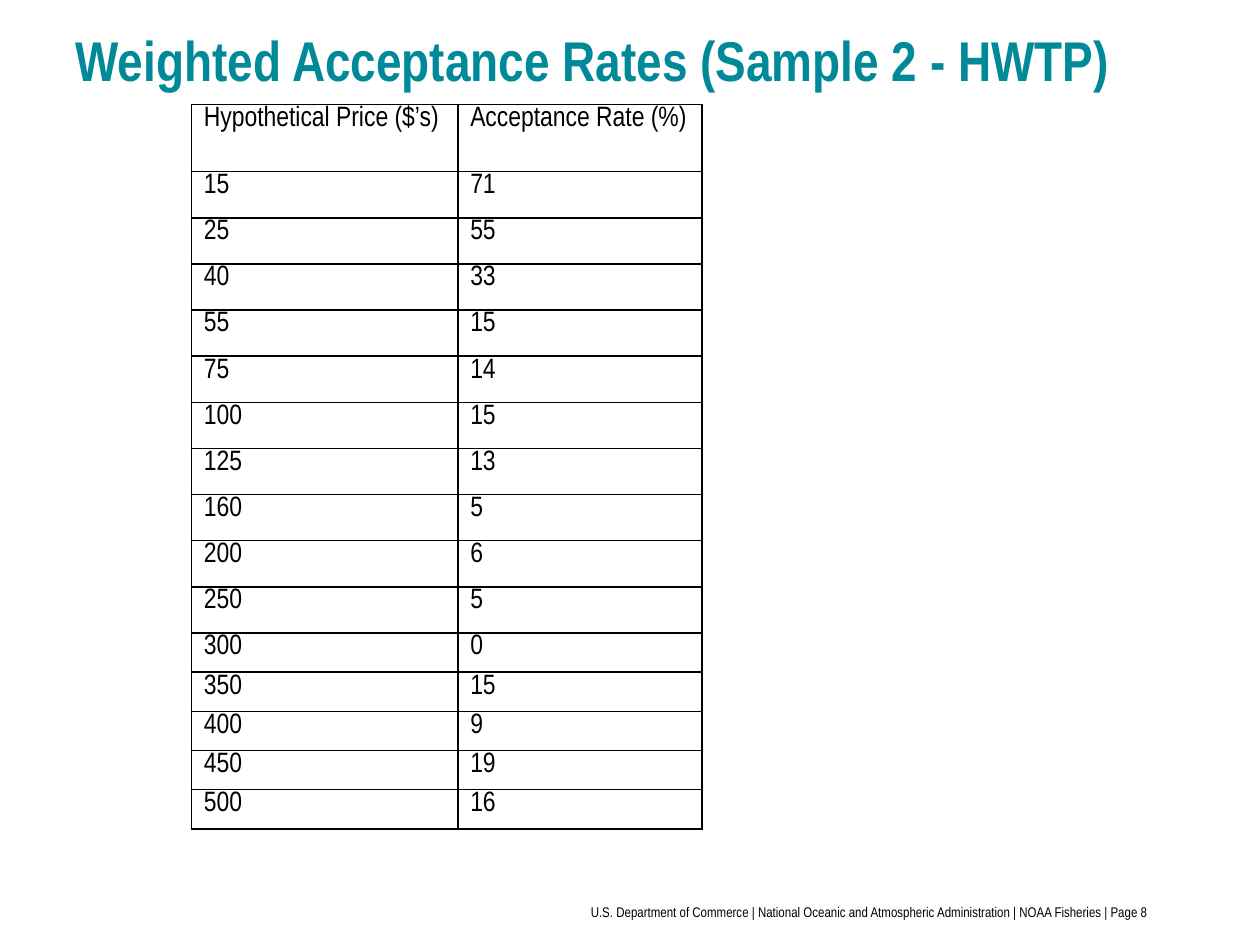
from lxml import etree
from pptx import Presentation
from pptx.dml.color import RGBColor
from pptx.enum import text
from pptx.oxml import ns
from pptx.util import Cm, Pt

HUES = {"title": "008998", "ink": "000000"}
FACE = "Arial Narrow"
TITLE = "Weighted Acceptance Rates (Sample 2 - HWTP)"
FOOT = ["U.S. Department of Commerce", "National Oceanic and Atmospheric Administration",
        "NOAA Fisheries", "Page 8"]
HEAD = ("Hypothetical Price ($’s)", "Acceptance Rate (%)")
RATES = [(15, 71), (25, 55), (40, 33), (55, 15), (75, 14), (100, 15), (125, 13),
         (160, 5), (200, 6), (250, 5), (300, 0), (350, 15), (400, 9), (450, 19), (500, 16)]
COLS = [5.37, 4.92]
ROWS = [1.35] + [0.93] * 10 + [0.79] * 5


def style(para, size, hue, bold=False):
    font = para.font
    font.name, font.size, font.bold = FACE, Pt(size), bold
    font.color.rgb = RGBColor.from_string(HUES[hue])


def label(slide, words, box, anchor, *look):
    frame = slide.shapes.add_textbox(*map(Cm, box)).text_frame
    frame.word_wrap = True
    frame.vertical_anchor = anchor
    frame.text = words
    style(frame.paragraphs[0], *look)


def border(cell):
    props = cell._tc.get_or_add_tcPr()
    for spot, side in enumerate(("lnL", "lnR", "lnT", "lnB")):
        line = etree.Element(ns.qn(f"a:{side}"), w=str(Pt(1)))
        fill = etree.SubElement(line, ns.qn("a:solidFill"))
        etree.SubElement(fill, ns.qn("a:srgbClr"), val=HUES["ink"])
        props.insert(spot, line)


def grid(slide):
    data = [HEAD] + RATES
    table = slide.shapes.add_table(len(data), len(HEAD), Cm(3.86), Cm(2.11),
                                   Cm(sum(COLS)), Cm(sum(ROWS))).table
    table.first_row = table.horz_banding = False
    for col, width in zip(table.columns, COLS):
        col.width = Cm(width)
    for row, height, items in zip(table.rows, ROWS, data):
        row.height = Cm(height)
        for cell, item in zip(row.cells, items):
            cell.text = str(item)
            cell.margin_left = cell.margin_right = Cm(0.25)
            cell.margin_top = cell.margin_bottom = Cm(0.03)
            cell.fill.background()
            border(cell)
            style(cell.text_frame.paragraphs[0], 16, "ink")


def main():
    deck = Presentation()
    deck.slide_width, deck.slide_height = Cm(25.4), Cm(19.05)
    slide = deck.slides.add_slide(deck.slide_layouts[6])
    label(slide, TITLE, (1.27, 0.3, 22.86, 1.8), text.MSO_ANCHOR.MIDDLE, 32, "title", True)
    grid(slide)
    label(slide, " | ".join(FOOT), (11.66, 18.08, 12.47, 0.94), text.MSO_ANCHOR.TOP, 8, "ink")
    deck.save("out.pptx")


if __name__ == "__main__":
    main()
